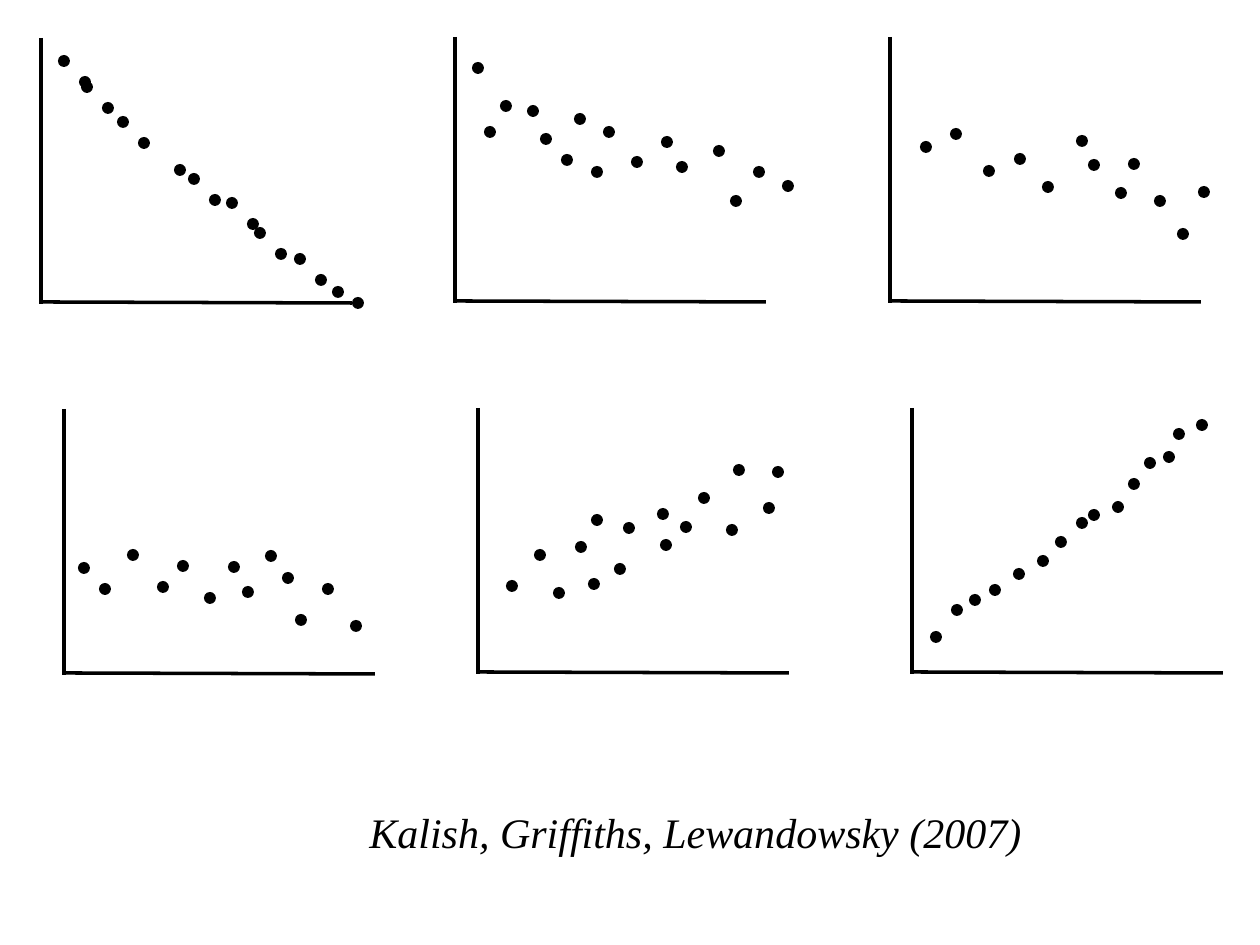
from typing import NamedTuple

from lxml import etree
from pptx import Presentation
from pptx import util as u
from pptx.dml.color import RGBColor
from pptx.enum import shapes, text
from pptx.oxml.ns import qn

PX_PER_INCH = 126
BLACK = "000000"
DOT = 12
AXIS_HEIGHT = 266
AXIS_WIDTH = 309


class Plot(NamedTuple):
    """A scatter plot: top of its vertical axis and the centres of its dots."""
    left: int
    top: int
    dots: list[tuple[int, int]]


PLOTS = [
    Plot(41, 38, [
        (64, 61), (85, 82), (87, 87), (108, 108), (123, 122), (144, 143),
        (180, 170), (194, 179), (215, 200), (232, 203), (253, 224), (260, 233),
        (281, 254), (300, 259), (321, 280), (338, 292), (358, 303)]),
    Plot(455, 37, [
        (478, 68), (490, 132), (506, 106), (533, 111), (546, 139), (567, 160),
        (580, 119), (597, 172), (609, 132), (637, 162), (667, 142), (682, 167),
        (719, 151), (736, 201), (759, 172), (788, 186)]),
    Plot(890, 37, [
        (926, 147), (956, 134), (989, 171), (1020, 159), (1048, 187), (1082, 141),
        (1094, 165), (1121, 193), (1134, 164), (1160, 201), (1183, 234), (1204, 192)]),
    Plot(64, 409, [
        (84, 568), (105, 589), (133, 555), (163, 587), (183, 566), (210, 598),
        (234, 567), (248, 592), (271, 556), (288, 578), (301, 620), (328, 589),
        (356, 626)]),
    Plot(478, 408, [
        (512, 586), (540, 555), (559, 593), (581, 547), (594, 584), (597, 520),
        (620, 569), (629, 528), (663, 514), (666, 545), (686, 527), (704, 498),
        (732, 530), (739, 470), (769, 508), (778, 472)]),
    Plot(912, 408, [
        (936, 637), (957, 610), (975, 600), (995, 590), (1019, 574), (1043, 561),
        (1061, 542), (1082, 523), (1094, 515), (1118, 507), (1134, 484), (1150, 463),
        (1169, 457), (1179, 434), (1202, 425)]),
]


def px(n: int) -> int:
    return u.Emu(round(n * u.Inches(1) / PX_PER_INCH))


def colour(value: str) -> RGBColor:
    return RGBColor.from_string(value)


def add_line(parent, x1: int, y1: int, x2: int, y2: int) -> None:
    sp = parent.add_connector(shapes.MSO_CONNECTOR.STRAIGHT, px(x1), px(y1), px(x2), px(y2))
    sp.line.color.rgb = colour(BLACK)
    sp.line.width = u.Pt(2)
    etree.SubElement(sp._element.spPr, qn("a:effectLst"))


def add_axes(slide, plot: Plot) -> None:
    """Draw both axes as one group; the horizontal one drops by a pixel."""
    axes = slide.shapes.add_group_shape().shapes
    x, y = plot.left, plot.top
    add_line(axes, x, y, x, y + AXIS_HEIGHT)
    add_line(axes, x + 2, y + AXIS_HEIGHT - 2, x + 2 + AXIS_WIDTH, y + AXIS_HEIGHT - 1)


def add_dot(slide, x: int, y: int) -> None:
    sp = slide.shapes.add_shape(
        shapes.MSO_SHAPE.OVAL, px(x - DOT // 2), px(y - DOT // 2), px(DOT), px(DOT))
    sp.shadow.inherit = False
    sp.fill.solid()
    sp.fill.fore_color.rgb = colour(BLACK)
    sp.line.fill.background()


def add_citation(slide, words: str) -> None:
    tf = slide.shapes.add_textbox(px(110), px(757), px(924), px(125)).text_frame
    tf.word_wrap = True
    tf.vertical_anchor = text.MSO_ANCHOR.MIDDLE
    p = tf.paragraphs[0]
    p.alignment = text.PP_ALIGN.RIGHT
    p.line_spacing = 1.5
    r = p.add_run()
    r.text = words
    r.font.name = "Times New Roman"
    r.font.size = u.Pt(24)
    r.font.italic = True
    r.font.color.rgb = colour(BLACK)


def main() -> None:
    prs = Presentation()
    prs.slide_width, prs.slide_height = px(1260), px(945)
    slide = prs.slides.add_slide(prs.slide_layouts[6])
    for plot in PLOTS:
        add_axes(slide, plot)
    for plot in PLOTS:
        for x, y in plot.dots:
            add_dot(slide, x, y)
    add_citation(slide, "Kalish, Griffiths, Lewandowsky (2007)")
    prs.save("out.pptx")


if __name__ == "__main__":
    main()
